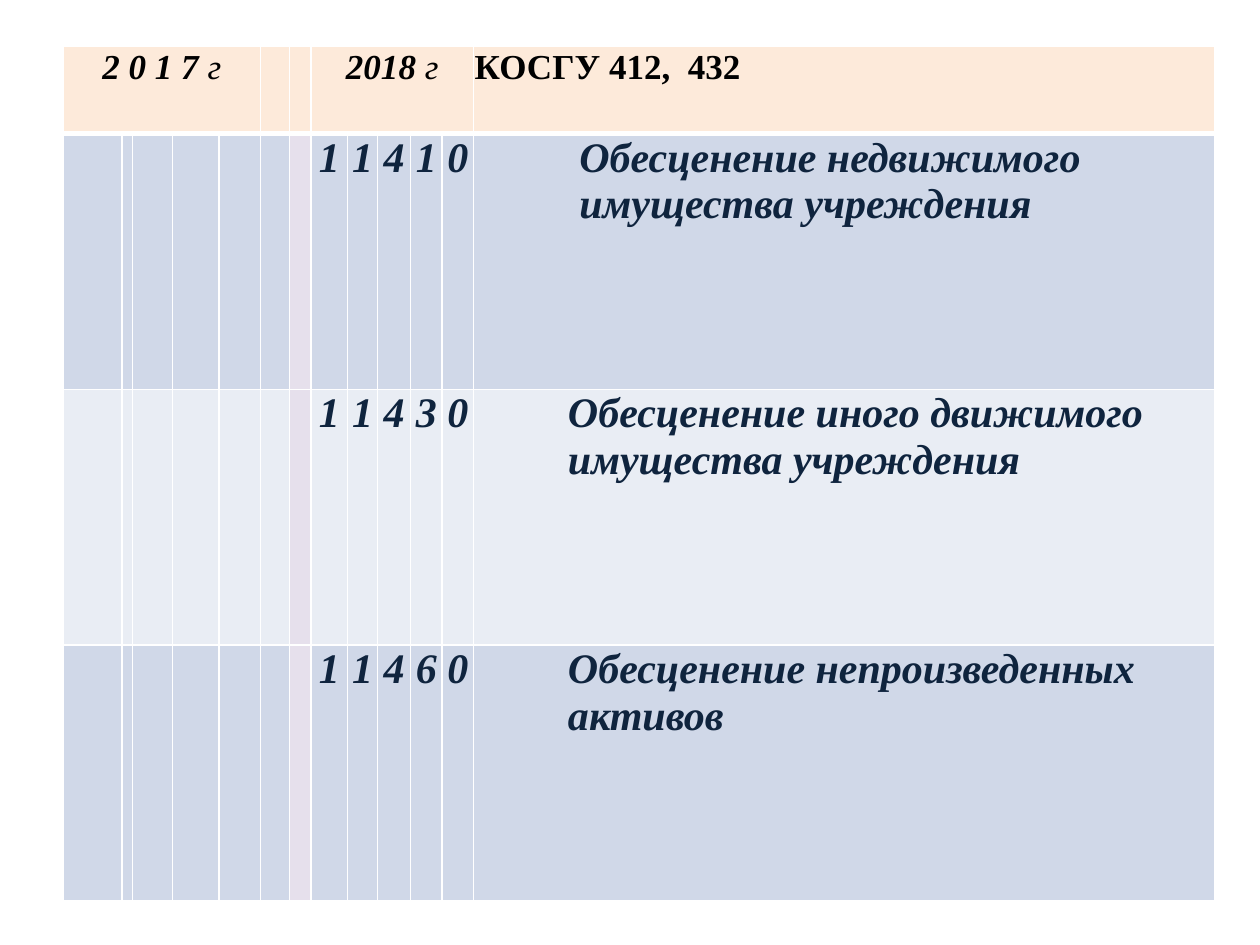
import pptx
import pptx.util
import pptx.dml.color
import pptx.enum.text
import pptx.oxml.ns
from lxml import etree

Inches, Pt = pptx.util.Inches, pptx.util.Pt
RGB = pptx.dml.color.RGBColor
CENTER = pptx.enum.text.PP_ALIGN.CENTER
LEFT = pptx.enum.text.PP_ALIGN.LEFT
qn = pptx.oxml.ns.qn

COLORS = {"header": "FDEADA", "odd": "D0D8E8", "even": "E9EDF4",
          "gap": "E6E0EC", "border": "FFFFFF", "black": "000000", "navy": "0F243E"}
COL_WIDTHS = [0.47, 0.08, 0.32, 0.37, 0.33, 0.23, 0.17,
              0.29, 0.24, 0.26, 0.25, 0.25, 5.88]
ROW_HEIGHTS = [0.69, 2.03, 2.03, 2.03]
GAP_COL, CODE_COL, NAME_COL = 6, 7, 12

# Account code, left indent of the name, paragraphs of the name
ACCOUNTS = [
    ("11410", 0.84, ["Обесценение недвижимого", "имущества учреждения"]),
    ("11430", 0.75, ["Обесценение иного движимого имущества учреждения"]),
    ("11460", 0.75, ["Обесценение непроизведенных активов"]),
]


def style_cell(cell, fill, top, bottom):
    cell.margin_left = cell.margin_right = cell.margin_top = Inches(0.01)
    cell.margin_bottom = 0
    tcPr = cell._tc.get_or_add_tcPr()
    for side, width in (("L", 1), ("R", 1), ("T", top), ("B", bottom)):
        ln = etree.SubElement(tcPr, qn("a:ln" + side), w=str(Pt(width)))
        solid = etree.SubElement(ln, qn("a:solidFill"))
        etree.SubElement(solid, qn("a:srgbClr"), val=COLORS["border"])
    cell.fill.solid()
    cell.fill.fore_color.rgb = RGB.from_string(COLORS[fill])


def write(p, runs, size, color, align, italic=True):
    p.alignment = align
    p.font.name = "Times New Roman"
    p.font.size = Pt(size)
    p.font.italic = italic
    p.font.color.rgb = RGB.from_string(COLORS[color])
    for text, bold in runs:
        r = p.add_run()
        r.text = text
        r.font.bold = bold


prs = pptx.Presentation()
prs.slide_width, prs.slide_height = Inches(10), Inches(7.5)
s = prs.slides.add_slide(prs.slide_layouts[6])

# Table grid
tbl = s.shapes.add_table(len(ROW_HEIGHTS), len(COL_WIDTHS), Inches(0.5), Inches(0.37),
                         Inches(sum(COL_WIDTHS)), Inches(sum(ROW_HEIGHTS))).table
for col, width in zip(tbl.columns, COL_WIDTHS):
    col.width = Inches(width)
for row, height in zip(tbl.rows, ROW_HEIGHTS):
    row.height = Inches(height)

# Fills and borders, with a thick rule under the header
for i in range(len(ROW_HEIGHTS)):
    for j in range(len(COL_WIDTHS)):
        if i == 0:
            fill = "header"
        elif j == GAP_COL:
            fill = "gap"
        else:
            fill = "odd" if i % 2 else "even"
        style_cell(tbl.cell(i, j), fill, 3 if i == 1 else 1, 3 if i == 0 else 1)

# Header row
for j, year in ((0, "2 0 1 7 "), (CODE_COL, "2018 ")):
    cell = tbl.cell(0, j)
    cell.merge(tbl.cell(0, j + 4))
    write(cell.text_frame.paragraphs[0], [(year, True), ("г", False)], 20, "black", CENTER)
write(tbl.cell(0, NAME_COL).text_frame.paragraphs[0],
      [("КОСГУ 412,  432", True)], 20, "black", LEFT, italic=False)

# Account rows: one digit per column, then the name
for i, (code, indent, lines) in enumerate(ACCOUNTS, start=1):
    for j, digit in enumerate(code, start=CODE_COL):
        write(tbl.cell(i, j).text_frame.paragraphs[0], [(digit, True)], 24, "navy", CENTER)
    cell = tbl.cell(i, NAME_COL)
    cell.margin_left = Inches(indent)
    tf = cell.text_frame
    for n, line in enumerate(lines):
        p = tf.add_paragraph() if n else tf.paragraphs[0]
        write(p, [(line, True)], 24, "navy", LEFT)

prs.save("out.pptx")
